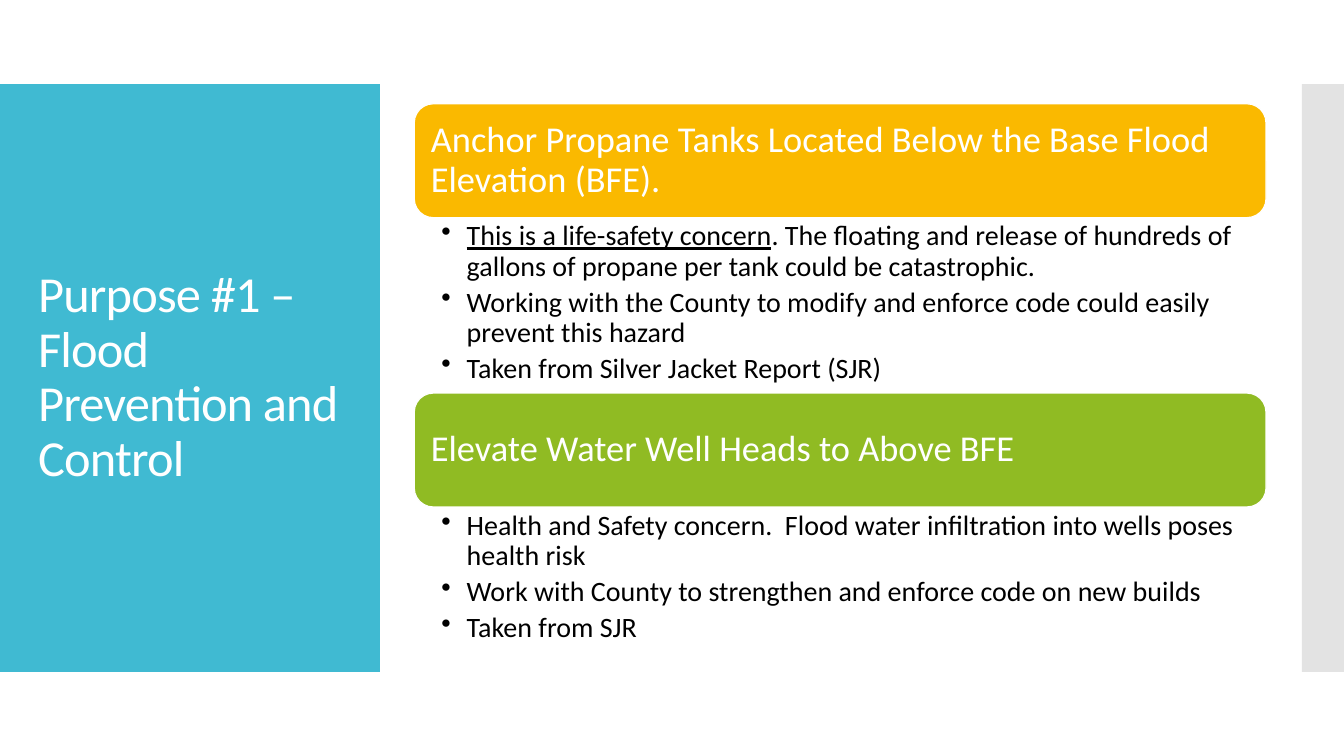
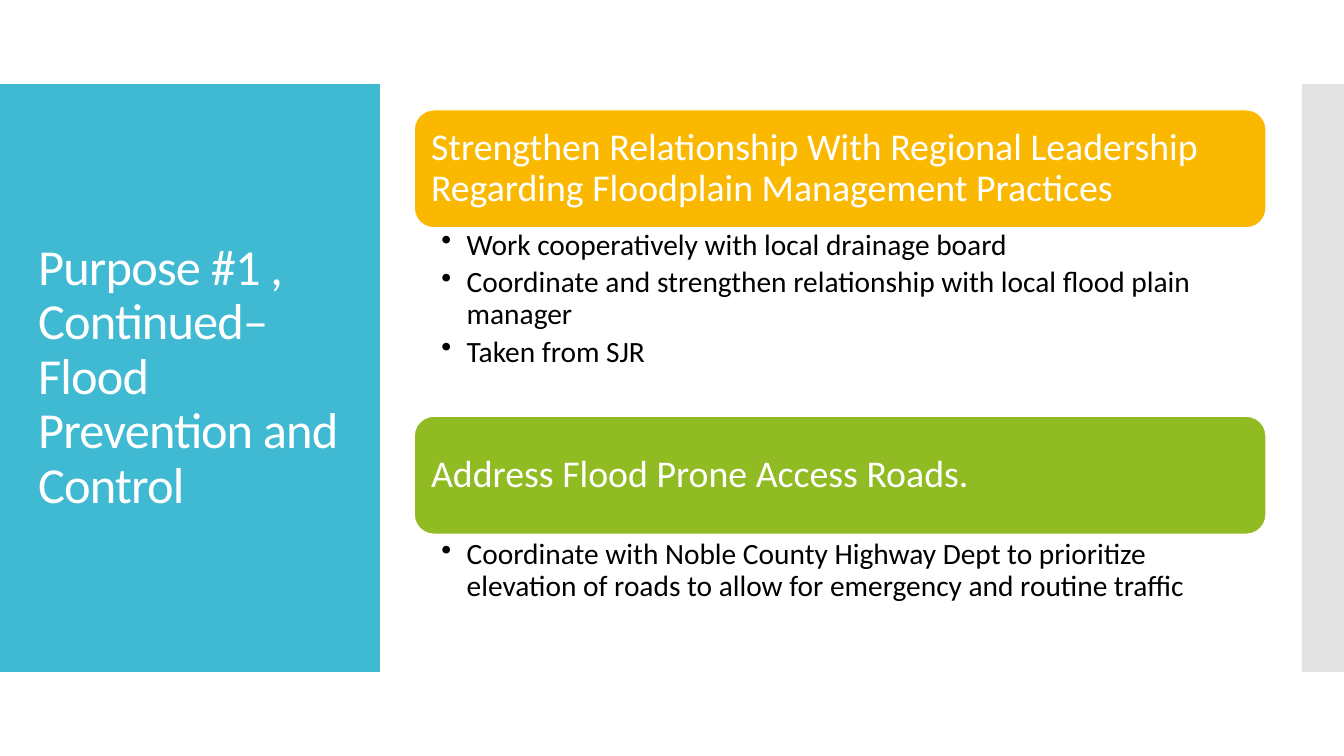
from collections import namedtuple

from lxml.etree import SubElement
from pptx import Presentation
from pptx.dml.color import RGBColor
from pptx.enum.shapes import MSO_SHAPE as Shape
from pptx.enum.text import MSO_ANCHOR as Anchor, PP_ALIGN as Align
from pptx.oxml.ns import qn
from pptx.util import Inches, Pt

COLUMNS, ROWS = 160, 90
CELL = Inches(7.5) / ROWS
FONT = "Calibri"
TEAL, GRAY, WHITE, BLACK = "40BAD2", "C8C8C8", "FFFFFF", "000000"
HEADING_COLORS = ("FAB900", "90BB23")
BAND_TOP, BAND_HEIGHT = 10, 70
PANEL_WIDTH, STRIP_WIDTH = 45.24, 5
CONTENT_LEFT, CONTENT_WIDTH = 49.32, 101.4

Section = namedtuple("Section", "top heading body_top body_height bullets")
Page = namedtuple("Page", "title heading_height heading_size bullet_size sections")

PAGES = (
    Page("Purpose #1 – Flood Prevention and Control", 13.56, 26, 20, (
        Section(12.36, "Anchor Propane Tanks Located Below the Base Flood Elevation (BFE).",
                25.92, 20.88, (
                    ("This is a life-safety concern",
                     ". The floating and release of hundreds of gallons of propane "
                     "per tank could be catastrophic."),
                    "Working with the County to modify and enforce code could easily "
                    "prevent this hazard",
                    "Taken from Silver Jacket Report (SJR)")),
        Section(46.8, "Elevate Water Well Heads to Above BFE", 60.36, 17.28, (
            "Health and Safety concern.  Flood water infiltration into wells poses health risk",
            "Work with County to strengthen and enforce code on new builds",
            "Taken from SJR")))),
    Page("Purpose #1 , Continued– Flood Prevention and Control", 14.04, 27, 21, (
        Section(13.08, "Strengthen Relationship With Regional Leadership "
                "Regarding Floodplain Management Practices", 26.88, 22.68, (
                    "Work cooperatively with local drainage board",
                    "Coordinate and strengthen relationship with local flood plain manager",
                    "Taken from SJR")),
        Section(49.56, "Address Flood Prone Access Roads.", 63.72, 13.56, (
            "Coordinate with Noble County Highway Dept to prioritize elevation of roads "
            "to allow for emergency and routine traffic",)))),
)


def color(value):
    return RGBColor.from_string(value)


def cells(*counts):
    return [round(count * CELL) for count in counts]


def add_block(slide, kind, left, top, width, height, fill, outline=None, opacity=None):
    block = slide.shapes.add_shape(kind, *cells(left, top, width, height))
    block.shadow.inherit = False
    block.fill.solid()
    block.fill.fore_color.rgb = color(fill)
    if outline:
        block.line.color.rgb = color(outline)
        block.line.width = Pt(0.85)
    else:
        block.line.fill.background()
    if opacity:
        tint = block.fill._xPr.find(".//" + qn("a:srgbClr"))
        SubElement(tint, qn("a:alpha"), val=str(opacity * 1000))
    return block


def add_box(slide, left, top, width, height):
    return slide.shapes.add_textbox(*cells(left, top, width, height))


def write(holder, paragraphs, size, ink, anchor=Anchor.MIDDLE,
          insets=(0.1, 0.05, 0.1, 0.05), after=0, bulleted=False, tracking=None):
    frame = holder.text_frame
    frame.word_wrap = True
    frame.vertical_anchor = anchor
    (frame.margin_left, frame.margin_top,
     frame.margin_right, frame.margin_bottom) = map(Inches, insets)
    for index, content in enumerate(paragraphs):
        paragraph = frame.add_paragraph() if index else frame.paragraphs[0]
        paragraph.alignment = Align.LEFT
        paragraph.line_spacing = 0.9
        paragraph.space_after = Pt(size * after)
        if bulleted:
            properties = paragraph._p.get_or_add_pPr()
            properties.set("marL", str(Inches(0.25)))
            properties.set("indent", str(-Inches(0.25)))
            SubElement(properties, qn("a:buChar"), char="•")
        lead, rest = ("", content) if isinstance(content, str) else content
        for words, underlined in ((lead, True), (rest, False)):
            if not words:
                continue
            run = paragraph.add_run()
            run.text = words
            run.font.name = FONT
            run.font.size = Pt(size)
            run.font.color.rgb = color(ink)
            if underlined:
                run.font.underline = True
            if tracking:
                run.font._element.set("spc", str(round(tracking * 100)))


def add_frame(slide, title):
    add_block(slide, Shape.RECTANGLE, 0, BAND_TOP, PANEL_WIDTH, BAND_HEIGHT, TEAL)
    add_block(slide, Shape.RECTANGLE, COLUMNS - STRIP_WIDTH, BAND_TOP,
              STRIP_WIDTH, BAND_HEIGHT, GRAY, opacity=50)
    title_box = add_box(slide, 3.36, BAND_TOP, 38.64, BAND_HEIGHT)
    write(title_box, [title], 36, WHITE, tracking=-0.6)


def add_section(slide, page, section, fill):
    heading = add_block(slide, Shape.ROUNDED_RECTANGLE, CONTENT_LEFT, section.top,
                        CONTENT_WIDTH, page.heading_height, fill, outline=WHITE)
    write(heading, [section.heading], page.heading_size, WHITE, insets=(0.11,) * 4)
    body = add_box(slide, CONTENT_LEFT, section.body_top, CONTENT_WIDTH, section.body_height)
    write(body, section.bullets, page.bullet_size, BLACK, anchor=Anchor.TOP,
          insets=(0.27, 0.04, 0.2, 0.04), after=0.2, bulleted=True)


def main():
    deck = Presentation()
    deck.slide_width, deck.slide_height = cells(COLUMNS, ROWS)
    blank = deck.slide_layouts[6]
    for page in PAGES:
        slide = deck.slides.add_slide(blank)
        add_frame(slide, page.title)
        for section, fill in zip(page.sections, HEADING_COLORS):
            add_section(slide, page, section, fill)
    deck.save("out.pptx")


if __name__ == "__main__":
    main()
